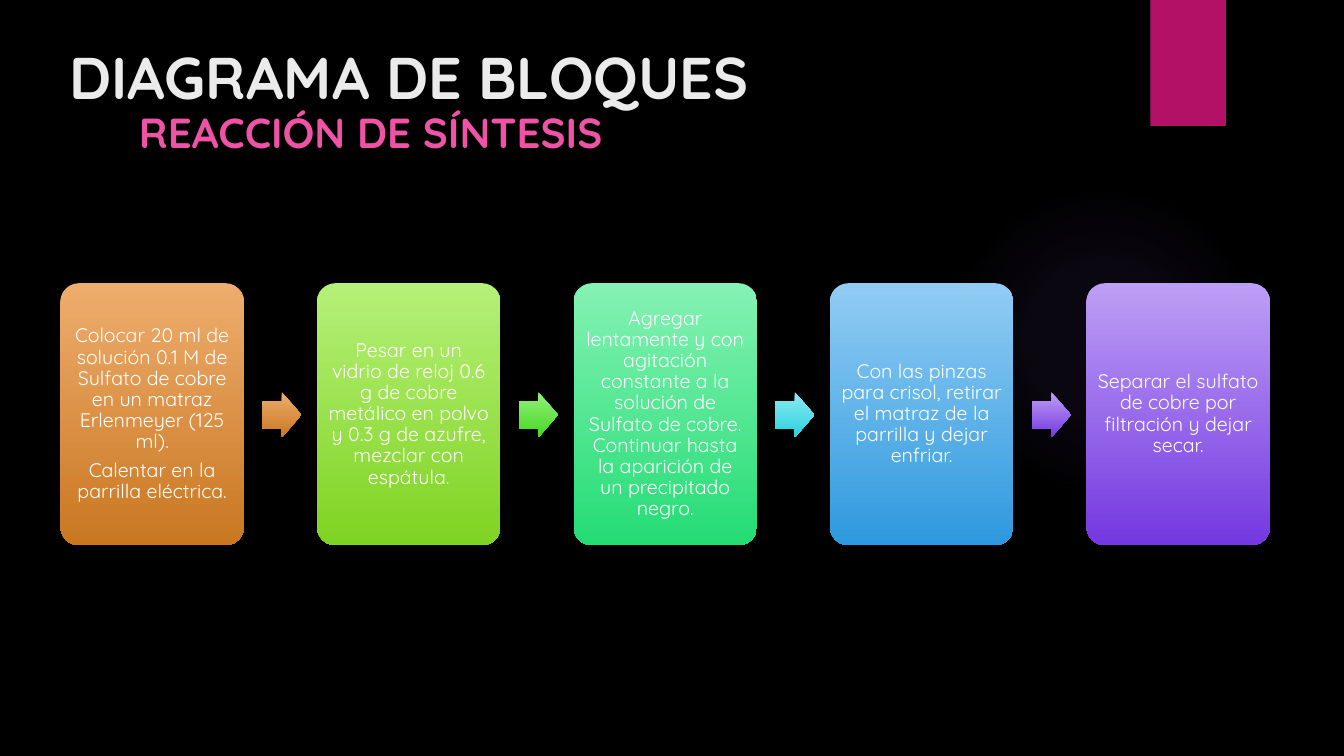
from pptx import Presentation
from pptx.dml.color import RGBColor as RGB
from pptx.enum.shapes import MSO_SHAPE as SHAPE
from pptx.enum.text import MSO_ANCHOR as ANCHOR, PP_ALIGN as ALIGN
from pptx.oxml import parse_xml
from pptx.oxml.ns import nsdecls, qn
from pptx.util import Inches, Pt

COLORS = {
    "back": "000000", "glow": "9B6BF2", "ribbon": "B31166",
    "title": "EBEBEB", "pink": "EF53A5", "white": "FFFFFF",
    "orange": ("EEAD6D", "C97721"), "lime": ("B5F078", "7FD322"),
    "green": ("93F17C", "47D722"), "mint": ("84F2B3", "24DC74"),
    "cyan": ("8DECF4", "2BD0DE"), "blue": ("91CCF4", "2E99DE"),
    "violet": ("BD9EF6", "7438E0"),
}
FONT = "Quicksand"
STEPS = [
    ("orange", "orange", ["Colocar 20 ml de solución 0.1 M de Sulfato de cobre en un matraz Erlenmeyer (125 ml).",
                          "Calentar en la parrilla eléctrica."]),
    ("lime", "green", ["Pesar en un vidrio de reloj 0.6 g de cobre metálico en polvo y 0.3 g de azufre, "
                       "mezclar con espátula."]),
    ("mint", "cyan", ["Agregar lentamente y con agitación constante a la solución de Sulfato de cobre. "
                      "Continuar hasta la aparición de un precipitado negro."]),
    ("blue", "violet", ["Con las pinzas para crisol, retirar el matraz de la parrilla y dejar enfriar."]),
    ("violet", None, ["Separar el sulfato de cobre por filtración y dejar secar."]),
]
HEADS = [
    ("DIAGRAMA DE BLOQUES", (0.59, 0.35, 10.29, 1.53), 42, "title", ANCHOR.TOP),
    ("REACCIÓN DE SÍNTESIS", (1.28, 0.98, 6.47, 0.63), 30, "pink", ANCHOR.BOTTOM),
]

deck = Presentation()
deck.slide_width, deck.slide_height = Inches(13.33), Inches(7.5)
slide = deck.slides.add_slide(deck.slide_layouts[6])
slide.background.fill.solid()
slide.background.fill.fore_color.rgb = RGB.from_string(COLORS["back"])


def add_shape(kind, box, fade=None):
    shape = slide.shapes.add_shape(kind, *map(Inches, box))
    shape.shadow.inherit = False
    shape.line.fill.background()
    if fade:
        shape.fill.gradient()
        shape.fill.gradient_angle = 270
        for stop, place, color in zip(shape.fill.gradient_stops, (0, 1), COLORS[fade]):
            stop.position = place
            stop.color.rgb = RGB.from_string(color)
    return shape


def set_font(para, size, color, bold=False):
    para.font.name, para.font.size, para.font.bold = FONT, Pt(size), bold
    para.font.color.rgb = RGB.from_string(COLORS[color])


glow = add_shape(SHAPE.OVAL, (9.41, 1.83, 3.08, 3.08))
glow.fill.gradient()
stops = "".join(
    f'<a:gs pos="{place * 1000}"><a:srgbClr val="{COLORS["glow"]}"><a:alpha val="{alpha * 1000}"/></a:srgbClr></a:gs>'
    for place, alpha in ((0, 7), (36, 6), (69, 0)))
props = glow.element.spPr
props.replace(props.find(qn("a:gradFill")), parse_xml(
    f'<a:gradFill {nsdecls("a")}><a:gsLst>{stops}</a:gsLst><a:path path="circle">'
    '<a:fillToRect l="50000" t="50000" r="50000" b="50000"/></a:path></a:gradFill>'))

ribbon = add_shape(SHAPE.RECTANGLE, (11.41, 0, 0.75, 1.25))
ribbon.fill.solid()
ribbon.fill.fore_color.rgb = RGB.from_string(COLORS["ribbon"])

for text, box, size, color, anchor in HEADS:
    frame = slide.shapes.add_textbox(*map(Inches, box)).text_frame
    frame.word_wrap = True
    frame.vertical_anchor = anchor
    frame.text = text
    set_font(frame.paragraphs[0], size, color, True)

for i, (fade, next_fade, texts) in enumerate(STEPS):
    left = 0.6 + 2.544 * i
    block = add_shape(SHAPE.ROUNDED_RECTANGLE, (left, 2.81, 1.82, 2.6), fade)
    block.adjustments[0] = 0.1
    frame = block.text_frame
    frame.word_wrap = True
    frame.vertical_anchor = ANCHOR.MIDDLE
    frame.margin_left = frame.margin_right = frame.margin_top = frame.margin_bottom = Inches(0.06)
    frame.text = "\n".join(texts)
    for para in frame.paragraphs:
        para.alignment = ALIGN.CENTER
        para.line_spacing = 0.9
        para.space_after = Pt(5)
        set_font(para, 14, "white")
    if next_fade:
        arrow = add_shape(SHAPE.RIGHT_ARROW, (left + 2, 3.89, 0.39, 0.45), next_fade)
        arrow.adjustments[0], arrow.adjustments[1] = 0.6, 0.5

deck.save("out.pptx")
